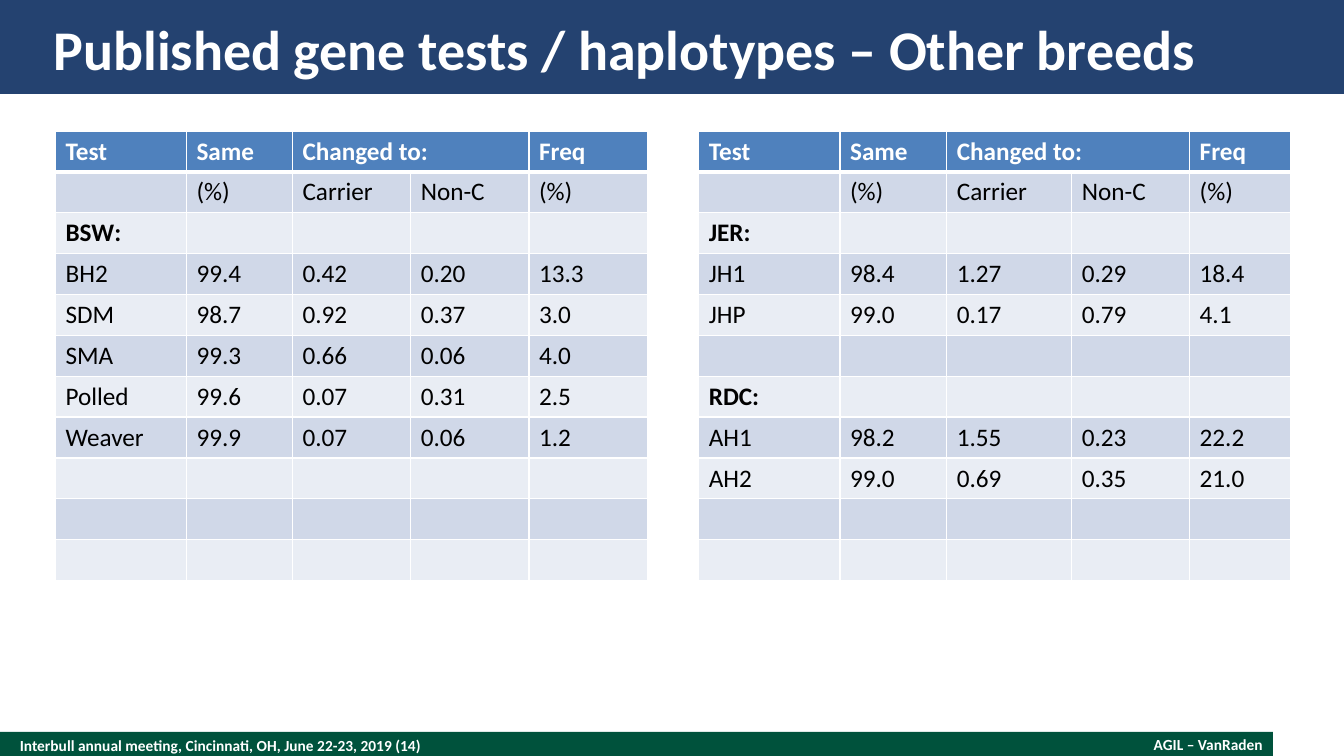
from dataclasses import dataclass

import lxml.etree
import pptx
import pptx.dml.color
import pptx.enum.shapes
import pptx.enum.text
import pptx.oxml.ns
import pptx.util

Cm = pptx.util.Cm
Align = pptx.enum.text.PP_ALIGN
Anchor = pptx.enum.text.MSO_ANCHOR


@dataclass(frozen=True)
class Theme:
    font: str = "Calibri"
    white: str = "FFFFFF"
    black: str = "000000"
    banner: str = "244270"
    footer: str = "00523C"
    header: str = "4F81BD"
    bands: tuple = ("D0D8E8", "E9EDF4")
    title_size: int = 40
    table_size: int = 18
    footer_size: int = 11
    thin: int = 1
    thick: int = 3


THEME = Theme()
SLIDE_WIDTH, SLIDE_HEIGHT = 33.87, 19.05
ROW_HEIGHT, ROW_COUNT = 1.03, 11
HEADINGS = [
    ["Test", "Same", "Changed to:", "", "Freq"],
    ["", "(%)", "Carrier", "Non-C", "(%)"],
]
BROWN_SWISS = [
    ["BSW:"],
    ["BH2", "99.4", "0.42", "0.20", "13.3"],
    ["SDM", "98.7", "0.92", "0.37", "3.0"],
    ["SMA", "99.3", "0.66", "0.06", "4.0"],
    ["Polled", "99.6", "0.07", "0.31", "2.5"],
    ["Weaver", "99.9", "0.07", "0.06", "1.2"],
]
JERSEY_AND_RED = [
    ["JER:"],
    ["JH1", "98.4", "1.27", "0.29", "18.4"],
    ["JHP", "99.0", "0.17", "0.79", "4.1"],
    [],
    ["RDC:"],
    ["AH1", "98.2", "1.55", "0.23", "22.2"],
    ["AH2", "99.0", "0.69", "0.35", "21.0"],
]


def rgb(value):
    return pptx.dml.color.RGBColor.from_string(value)


def write(frame, text, *, size, color=THEME.white, bold=True, align=Align.LEFT):
    para = frame.paragraphs[0]
    para.alignment = align
    span = para.add_run()
    span.text = text
    span.font.name = THEME.font
    span.font.size = pptx.util.Pt(size)
    span.font.bold = bold
    span.font.color.rgb = rgb(color)


def set_frame(frame):
    frame.margin_left = frame.margin_top = frame.margin_right = frame.margin_bottom = 0
    frame.word_wrap = True
    frame.auto_size = pptx.enum.text.MSO_AUTO_SIZE.NONE
    frame.vertical_anchor = Anchor.MIDDLE


def add_bar(page, left, top, width, height, color):
    bar = page.shapes.add_shape(
        pptx.enum.shapes.MSO_SHAPE.RECTANGLE, Cm(left), Cm(top), Cm(width), Cm(height))
    bar.shadow.inherit = False
    bar.fill.solid()
    bar.fill.fore_color.rgb = rgb(color)
    bar.line.fill.background()


def add_label(page, left, top, width, height, text, align):
    box = page.shapes.add_textbox(Cm(left), Cm(top), Cm(width), Cm(height))
    set_frame(box.text_frame)
    write(box.text_frame, text, size=THEME.footer_size, align=align)


def add_title(page, left, top, width, height, text):
    add_bar(page, left, top, width, height, THEME.banner)
    title = page.shapes.title
    title.left, title.top = Cm(left + 1.35), Cm(top + 0.33)
    title.width, title.height = Cm(width - 2.7), Cm(1.78)
    set_frame(title.text_frame)
    write(title.text_frame, text, size=THEME.title_size)
    # Bring the title in front of its banner
    title.element.getparent().append(title.element)


def add_footer(page, left, top, width, height, meeting, author):
    add_bar(page, left, top, width, height, THEME.footer)
    add_label(page, left + 0.5, top, 22, height, meeting, Align.LEFT)
    add_label(page, left + width - 7.7, top, 7.45, height - 0.05, author, Align.RIGHT)


def set_borders(cell, bottom):
    properties = cell._tc.get_or_add_tcPr()
    for side in ("lnL", "lnR", "lnT", "lnB"):
        points = bottom if side == "lnB" else THEME.thin
        line = lxml.etree.SubElement(
            properties, pptx.oxml.ns.qn(f"a:{side}"), w=str(pptx.util.Pt(points)))
        fill = lxml.etree.SubElement(line, pptx.oxml.ns.qn("a:solidFill"))
        lxml.etree.SubElement(fill, pptx.oxml.ns.qn("a:srgbClr"), val=THEME.white)


def add_gene_table(page, left, top, widths, results):
    table = page.shapes.add_table(
        ROW_COUNT, len(widths), Cm(left), Cm(top),
        Cm(sum(widths)), Cm(ROW_HEIGHT * ROW_COUNT)).table
    for column, width in zip(table.columns, widths):
        column.width = Cm(width)
    rows = HEADINGS + results
    for r in range(ROW_COUNT):
        table.rows[r].height = Cm(ROW_HEIGHT)
        values = rows[r] if r < len(rows) else []
        is_header = r == 0
        is_breed = len(values) == 1
        for c in range(len(widths)):
            cell = table.cell(r, c)
            set_borders(cell, THEME.thick if is_header else THEME.thin)
            cell.fill.solid()
            cell.fill.fore_color.rgb = rgb(
                THEME.header if is_header else THEME.bands[(r - 1) % 2])
            if c < len(values) and values[c]:
                write(cell.text_frame, values[c], size=THEME.table_size,
                      color=THEME.white if is_header else THEME.black,
                      bold=is_header or is_breed)
    table.cell(0, 2).merge(table.cell(0, 3))


def main():
    deck = pptx.Presentation()
    deck.slide_width, deck.slide_height = Cm(SLIDE_WIDTH), Cm(SLIDE_HEIGHT)
    page = deck.slides.add_slide(deck.slide_layouts.get_by_name("Title Only"))

    # Footer and title bands
    add_footer(page, 0, 18.44, 32.08, 0.68,
               "Interbull annual meeting, Cincinnati, OH, June 22-23, 2019 (14)",
               "AGIL – VanRaden")
    add_title(page, 0, 0, SLIDE_WIDTH, 2.37,
              "Published gene tests / haplotypes – Other breeds")

    # Result tables
    add_gene_table(page, 1.4, 3.3, [3.3, 2.67, 2.98, 2.98, 2.98], BROWN_SWISS)
    add_gene_table(page, 17.61, 3.3, [3.56, 2.69, 3.15, 2.97, 2.54], JERSEY_AND_RED)

    deck.save("out.pptx")


if __name__ == "__main__":
    main()
